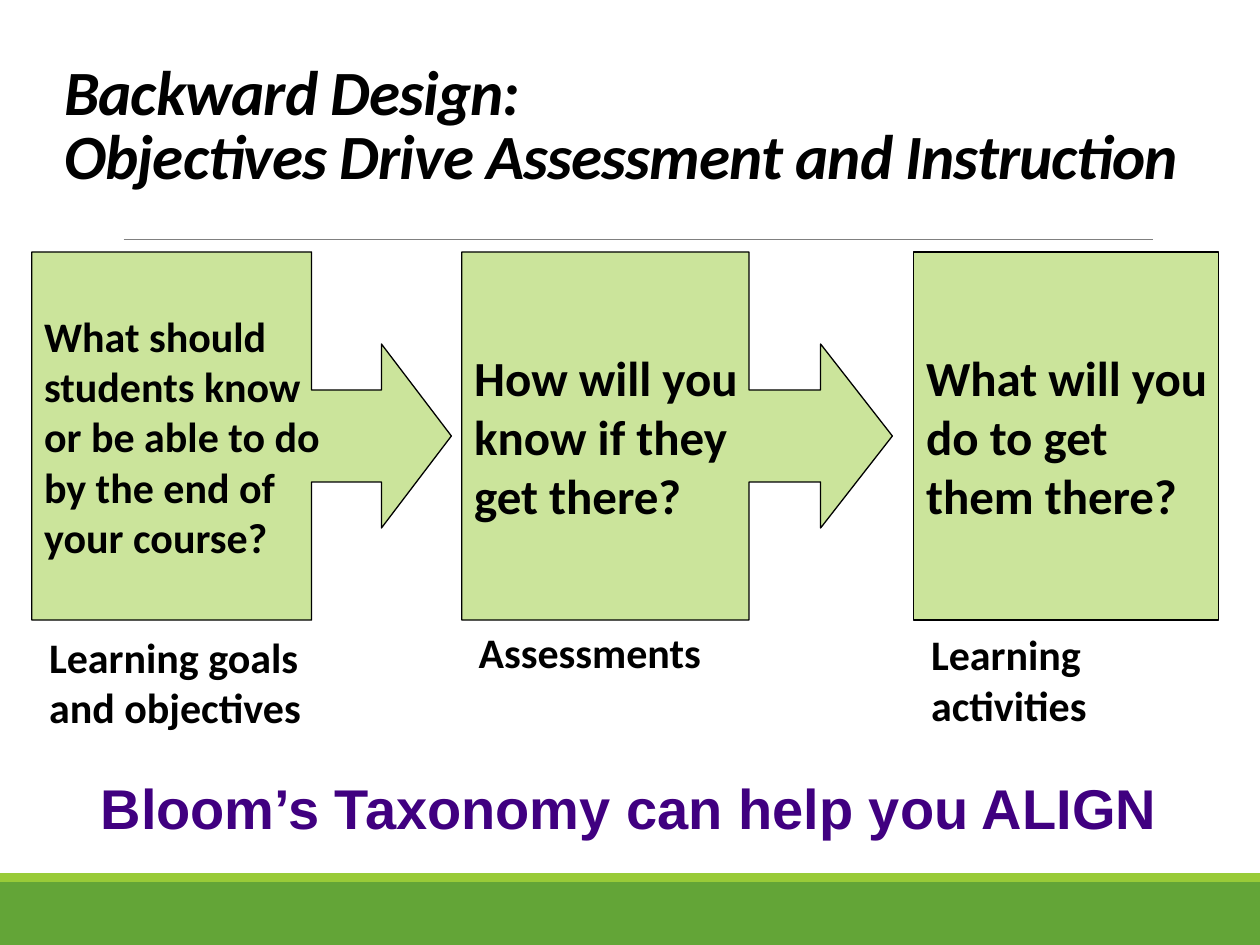
from lxml.etree import SubElement
from pptx import Presentation
from pptx.dml.color import RGBColor
from pptx.enum.shapes import MSO_CONNECTOR, MSO_SHAPE
from pptx.enum.text import MSO_ANCHOR, MSO_AUTO_SIZE, PP_ALIGN
from pptx.oxml.ns import qn
from pptx.util import Cm, Pt

# Content
TITLE = ["Backward Design:", "Objectives Drive Assessment and Instruction"]
CLOSING = "Bloom’s Taxonomy can help you ALIGN"
# lines, size, left, width, arrowhead depth (None: plain box)
STEPS = [
    (["What should", "students know", "or be able to do", "by the end of", "your course?"],
     24, 0.64, 8.46, 0.19),
    (["How will you", "know if they", "get there?"], 28, 9.31, 8.68, 0.195),
    (["What will you", "do to get", "them there?"], 28, 18.42, 6.14, None),
]
# text, left, top, width, height, wrap
CAPTIONS = [
    ("Learning goals and objectives", 0.74, 12.6, 6.4, 2.31, True),
    ("Assessments", 9.4, 12.5, 5.05, 1.27, False),
    ("Learning activities", 18.52, 12.55, 6.12, 2.31, True),
]
# left, top, width, height, colour
BANDS = [(0, 17.78, 25.4, 1.27, "63A537"), (0, 17.6, 25.4, 0.18, "99CB38")]
STEP_TOP, STEP_HEIGHT = 5.08, 7.42


def rgb(value):
    return RGBColor.from_string(value)


def add_run(p, text, size, color="000000", font="Calibri"):
    r = p.add_run()
    r.text = text
    r.font.size, r.font.name, r.font.bold = Pt(size), font, True
    r.font.color.rgb = rgb(color)
    return r


def add_box(kind, left, top, width, height, fill):
    sp = s.shapes.add_shape(kind, Cm(left), Cm(top), Cm(width), Cm(height))
    sp.shadow.inherit = False
    sp.fill.solid()
    sp.fill.fore_color.rgb = rgb(fill)
    sp.line.fill.background()
    return sp


def add_text(text, left, top, width, height, wrap, size=24, **style):
    sp = s.shapes.add_textbox(Cm(left), Cm(top), Cm(width), Cm(height))
    tf = sp.text_frame
    tf.word_wrap = wrap
    tf.auto_size = MSO_AUTO_SIZE.SHAPE_TO_FIT_TEXT
    add_run(tf.paragraphs[0], text, size, **style)
    return tf.paragraphs[0]


prs = Presentation()
prs.slide_width, prs.slide_height = Cm(25.4), Cm(19.05)
s = prs.slides.add_slide(prs.slide_layouts[5])

# Footer bands and rule under the title
for band in BANDS:
    add_box(MSO_SHAPE.RECTANGLE, *band)
rule = s.shapes.add_connector(MSO_CONNECTOR.STRAIGHT, Cm(2.49), Cm(4.83), Cm(23.24), Cm(4.83))
rule.line.color.rgb = rgb("808080")
rule.line.width = Pt(0.5)
SubElement(rule._element.spPr, qn("a:effectLst"))

# Title
title = s.shapes.title
title.left, title.top, title.width, title.height = Cm(1.04), Cm(1.27), Cm(23.27), Cm(2.74)
tf = title.text_frame
tf.auto_size = MSO_AUTO_SIZE.NONE
tf.vertical_anchor = MSO_ANCHOR.BOTTOM
p = tf.paragraphs[0]
p.alignment, p.line_spacing = PP_ALIGN.LEFT, 0.85
for i, line in enumerate(TITLE):
    if i:
        p.add_line_break()
    r = add_run(p, line, 36)
    r.font.italic = True
    r.font._element.set("spc", "-50")

# Steps: two arrow callouts leading to a plain box
for lines, size, left, width, head in STEPS:
    kind = MSO_SHAPE.RIGHT_ARROW_CALLOUT if head else MSO_SHAPE.RECTANGLE
    sp = add_box(kind, left, STEP_TOP, width, STEP_HEIGHT, "99CB38")
    if head:
        for i, value in enumerate((0.25, 0.25, head, 0.667)):
            sp.adjustments[i] = value
    color = sp.fill._xPr.find(qn("a:solidFill"))[0]
    SubElement(color, qn("a:alpha"), val="50000")
    sp.line.color.rgb = rgb("000000")
    sp.line.width = Pt(0.75)
    tf = sp.text_frame
    tf.word_wrap = False
    tf.vertical_anchor = MSO_ANCHOR.MIDDLE
    for i, line in enumerate(lines):
        p = tf.add_paragraph() if i else tf.paragraphs[0]
        p.alignment = PP_ALIGN.LEFT
        add_run(p, line, size)

# Captions and closing line
for caption in CAPTIONS:
    add_text(*caption)
p = add_text(CLOSING, 1.7, 15.47, 21.97, 1.63, False, 32, color="400080", font="Arial")
p.alignment = PP_ALIGN.CENTER

prs.save("out.pptx")
